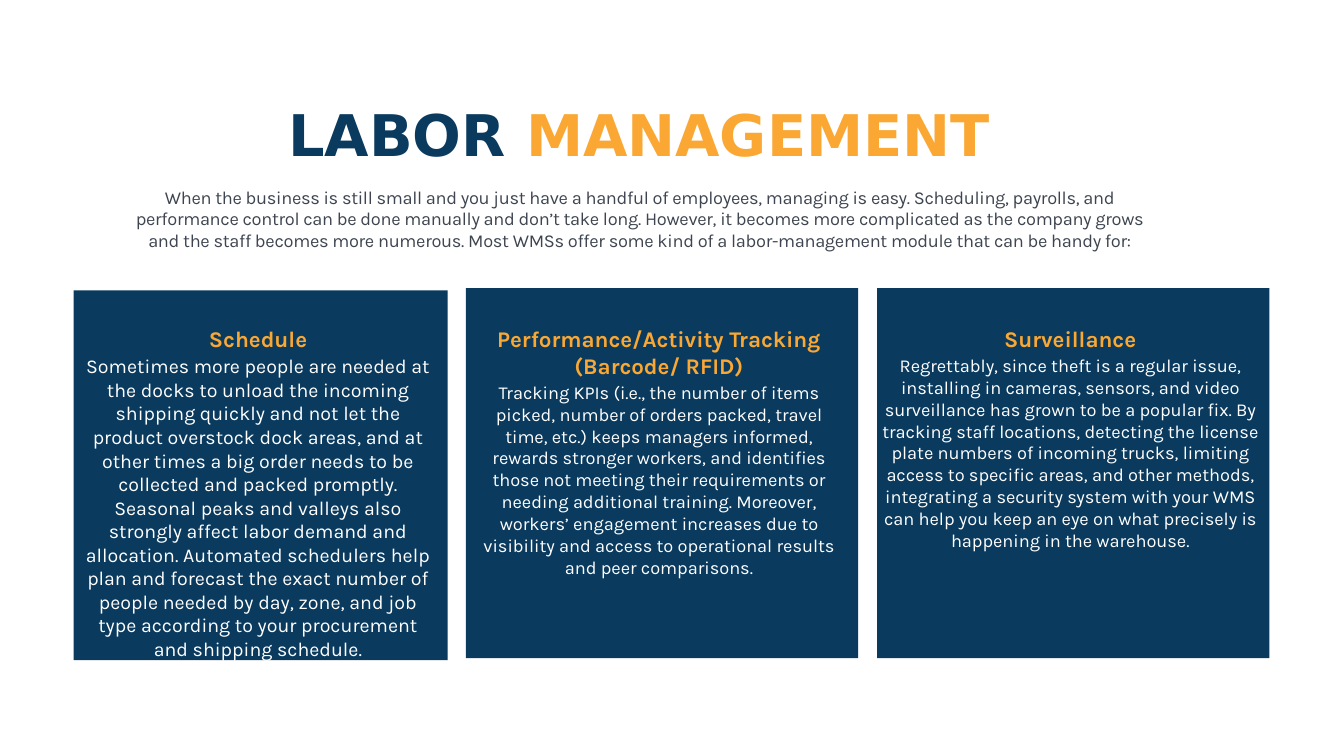
from pptx import Presentation
from pptx.dml.color import RGBColor
from pptx.enum.shapes import MSO_SHAPE
from pptx.enum.text import MSO_ANCHOR, MSO_AUTO_SIZE, PP_ALIGN
from pptx.util import Inches, Pt

NAVY = RGBColor(0x0A, 0x3A, 0x5E)
ORANGE = RGBColor(0xFA, 0xA8, 0x33)
GREY = RGBColor(0x3E, 0x45, 0x50)
WHITE = RGBColor(0xFF, 0xFF, 0xFF)


def set_frame(tf, side, top):
    tf.word_wrap = True
    tf.auto_size = MSO_AUTO_SIZE.NONE
    tf.vertical_anchor = MSO_ANCHOR.TOP
    tf.margin_left = tf.margin_right = Inches(side)
    tf.margin_top, tf.margin_bottom = Inches(top), 0


def add_run(p, text, font, size, color, bold=False):
    p.alignment = PP_ALIGN.CENTER
    r = p.add_run()
    r.text = text
    r.font.color.rgb = color
    for name, value in dict(name=font, size=Pt(size), bold=bold).items():
        setattr(r.font, name, value)
    return r


prs = Presentation()
prs.slide_width, prs.slide_height = Inches(13.33), Inches(7.5)
s = prs.slides.add_slide(prs.slide_layouts[5])

# Title with the introduction below it
title = s.shapes.title
title.left, title.top = Inches(0.92), Inches(0.75)
title.width, title.height = Inches(10.84), Inches(1.74)
tf = title.text_frame
set_frame(tf, 0.33, 0.23)
p = tf.paragraphs[0]
p.space_before = 0
add_run(p, "LABOR ", "DejaVu Sans", 41, NAVY, True)
add_run(p, "MANAGEMENT", "DejaVu Sans", 41, ORANGE, True)
p = tf.add_paragraph()
p.space_before = Pt(13)
r = add_run(
    p,
    "When the business is still small and you just have a handful of employees, "
    "managing is easy. Scheduling, payrolls, and performance control can be done "
    "manually and don’t take long. However, it becomes more complicated as the "
    "company grows and the staff becomes more numerous. Most WMSs offer some kind "
    "of a labor-management module that can be handy for:",
    "Karla", 13, GREY)
r._r.get_or_add_rPr().set("spc", "-20")

# Cards: (left, top, width), (text left, width, height), body size, heading, body
CARDS = [
    ((0.73, 2.88, 3.71), (0.8, 3.52, 3.13), 14, "Schedule",
     "Sometimes more people are needed at the docks to unload the incoming "
     "shipping quickly and not let the product overstock dock areas, and at other "
     "times a big order needs to be collected and packed promptly. Seasonal peaks "
     "and valleys also strongly affect labor demand and allocation. Automated "
     "schedulers help plan and forecast the exact number of people needed by day, "
     "zone, and job type according to your procurement and shipping schedule."),
    ((4.62, 2.86, 3.89), (4.73, 3.61, 2.54), 13,
     "Performance/Activity Tracking (Barcode/ RFID)",
     "Tracking KPIs (i.e., the number of items picked, number of orders packed, "
     "travel time, etc.) keeps managers informed, rewards stronger workers, and "
     "identifies those not meeting their requirements or needing additional "
     "training. Moreover, workers’ engagement increases due to visibility and "
     "access to operational results and peer comparisons."),
    ((8.7, 2.86, 3.89), (8.73, 3.77, 2.27), 13, "Surveillance",
     "Regrettably, since theft is a regular issue, installing in cameras, sensors, "
     "and video surveillance has grown to be a popular fix. By tracking staff "
     "locations, detecting the license plate numbers of incoming trucks, limiting "
     "access to specific areas, and other methods, integrating a security system "
     "with your WMS can help you keep an eye on what precisely is happening in the "
     "warehouse."),
]
CARD_HEIGHT, TEXT_TOP = 3.67, 3.19

for (left, top, width), (tx_left, tx_width, tx_height), size, heading, body in CARDS:
    # Panel
    sp = s.shapes.add_shape(MSO_SHAPE.RECTANGLE, Inches(left), Inches(top),
                            Inches(width), Inches(CARD_HEIGHT))
    sp.shadow.inherit = False
    sp.fill.solid()
    sp.fill.fore_color.rgb = NAVY
    sp.line.fill.background()

    # Heading and body
    tb = s.shapes.add_textbox(Inches(tx_left), Inches(TEXT_TOP),
                              Inches(tx_width), Inches(tx_height))
    tf = tb.text_frame
    set_frame(tf, 0, 0.04)
    add_run(tf.paragraphs[0], heading, "Karla", 16, ORANGE, True)
    p = tf.add_paragraph()
    p.space_before = Pt(1.3)
    add_run(p, body, "Karla", size, WHITE)

prs.save("out.pptx")
